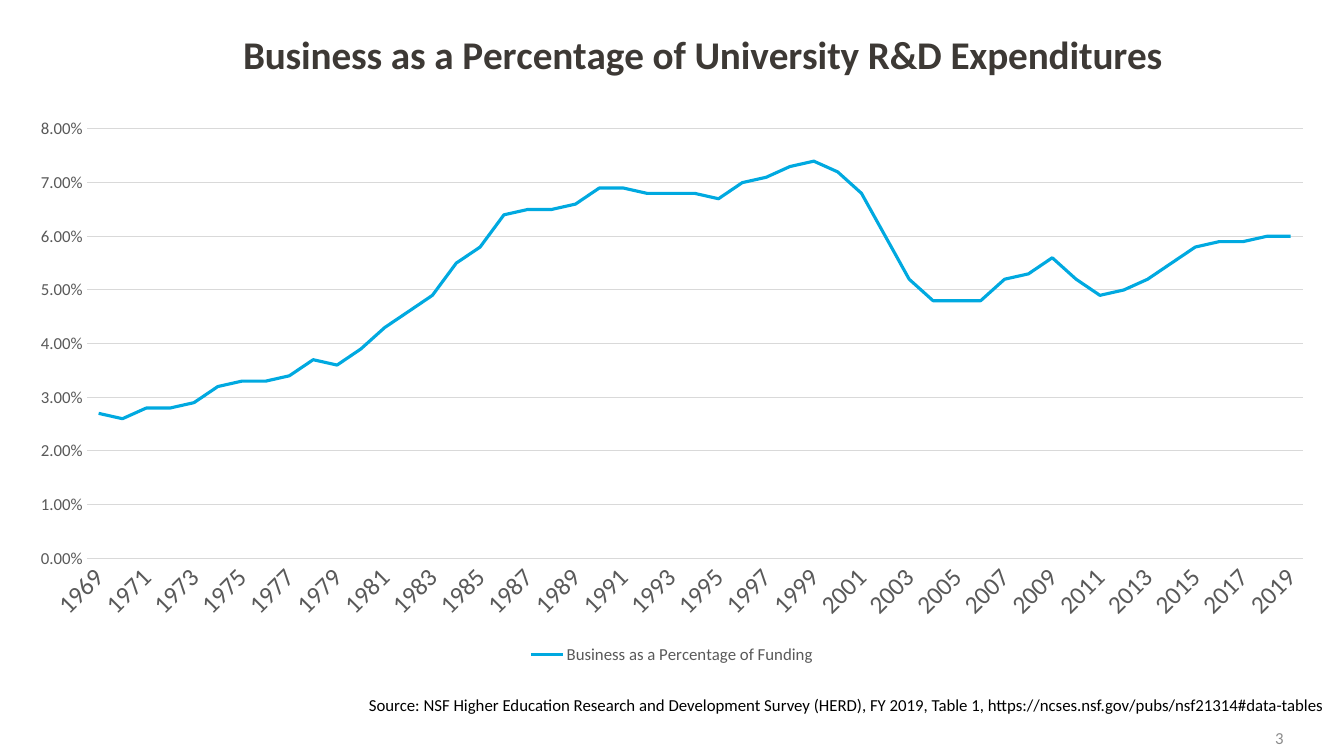
from dataclasses import dataclass

from lxml import etree
from pptx import Presentation
from pptx import util as u
from pptx.chart.data import CategoryChartData
from pptx.dml.color import RGBColor
from pptx.enum import chart as charts, text
from pptx.oxml import ns


@dataclass(frozen=True)
class Theme:
    font: str = "Calibri"
    title_color: str = "3D3935"
    label_color: str = "595959"
    number_color: str = "8C8C8C"
    source_color: str = "000000"
    grid_color: str = "D9D9D9"
    series_color: str = "00A9E0"
    title_size: float = 28
    year_size: float = 18
    body_size: float = 12
    series_width: float = 2.25
    grid_width: float = 0.75


FIRST_YEAR = 1969
SHARES = [
    0.027, 0.026, 0.028, 0.028, 0.029, 0.032, 0.033, 0.033, 0.034, 0.037,
    0.036, 0.039, 0.043, 0.046, 0.049, 0.055, 0.058, 0.064, 0.065, 0.065,
    0.066, 0.069, 0.069, 0.068, 0.068, 0.068, 0.067, 0.07, 0.071, 0.073,
    0.074, 0.072, 0.068, 0.06, 0.052, 0.048, 0.048, 0.048, 0.052, 0.053,
    0.056, 0.052, 0.049, 0.05, 0.052, 0.055, 0.058, 0.059, 0.059, 0.06,
    0.06,
]


class SlideBuilder:
    def __init__(self, slide, theme):
        self.slide = slide
        self.theme = theme

    def style_font(self, font, size, color, bold=False):
        font.name = self.theme.font
        font.size = u.Pt(size)
        font.bold = bold
        font.color.rgb = RGBColor.from_string(color)

    def style_line(self, line, width, color):
        line.width = u.Pt(width)
        line.color.rgb = RGBColor.from_string(color)

    def add_text(self, box, content, color, alignment, anchor):
        shape = self.slide.shapes.add_textbox(*map(u.Inches, box))
        frame = shape.text_frame
        frame.word_wrap = True
        frame.vertical_anchor = anchor
        paragraph = frame.paragraphs[0]
        paragraph.alignment = alignment
        run = paragraph.add_run()
        run.text = content
        self.style_font(run.font, self.theme.body_size, color)

    def place(self, element, settings):
        for old_layout in element.findall(ns.qn("c:layout")):
            element.remove(old_layout)
        layout = etree.Element(ns.qn("c:layout"))
        manual = etree.SubElement(layout, ns.qn("c:manualLayout"))
        for tag, value in settings.items():
            etree.SubElement(manual, ns.qn(f"c:{tag}")).set("val", str(value))
        position = 1 if element.find(ns.qn("c:tx")) is not None else 0
        element.insert(position, layout)

    def add_line_chart(self, box, title, title_at, plot_box, name, categories, values):
        left, top, width, height = box
        data = CategoryChartData(number_format="0.00%")
        data.categories = categories
        data.add_series(name, values)
        frame = self.slide.shapes.add_chart(
            charts.XL_CHART_TYPE.LINE, *map(u.Inches, box), data)
        chart = frame.chart
        self.style_font(chart.font, self.theme.body_size, self.theme.label_color)

        chart.has_title = True
        run = chart.chart_title.text_frame.paragraphs[0].add_run()
        run.text = title
        self.style_font(run.font, self.theme.title_size, self.theme.title_color, True)
        chart.chart_title.include_in_layout = False
        self.place(chart.chart_title._element, {
            "xMode": "edge", "yMode": "edge",
            "x": (title_at[0] - left) / width,
            "y": (title_at[1] - top) / height})

        plot = chart.plots[0]
        plot.vary_by_categories = False
        self.place(chart._chartSpace.chart.plotArea, {
            "layoutTarget": "inner", "xMode": "edge", "yMode": "edge",
            "x": (plot_box[0] - left) / width,
            "y": (plot_box[1] - top) / height,
            "w": plot_box[2] / width,
            "h": plot_box[3] / height})
        series = plot.series[0]
        series.smooth = False
        series.marker.style = charts.XL_MARKER_STYLE.NONE
        self.style_line(series.format.line, self.theme.series_width, self.theme.series_color)

        self.style_axes(chart)
        chart.has_legend = True
        chart.legend.position = charts.XL_LEGEND_POSITION.BOTTOM
        chart.legend.include_in_layout = False
        self.style_font(chart.legend.font, self.theme.body_size, self.theme.label_color)

    def style_axes(self, chart):
        theme = self.theme
        years, shares = chart.category_axis, chart.value_axis
        for axis, size in ((years, theme.year_size), (shares, theme.body_size)):
            axis.major_tick_mark = charts.XL_TICK_MARK.NONE
            axis.minor_tick_mark = charts.XL_TICK_MARK.NONE
            self.style_font(axis.tick_labels.font, size, theme.label_color)
        self.style_line(years.format.line, theme.grid_width, theme.grid_color)
        years._element.find(ns.qn("c:txPr")).find(ns.qn("a:bodyPr")).set("rot", "-2700000")
        skip = etree.Element(ns.qn("c:tickLblSkip"))
        skip.set("val", "2")
        years._element.find(ns.qn("c:noMultiLvlLbl")).addprevious(skip)

        shares.minimum_scale, shares.maximum_scale, shares.major_unit = 0, 0.08, 0.01
        shares.tick_labels.number_format = "0.00%"
        shares.tick_labels.number_format_is_linked = False
        shares.format.line.fill.background()
        shares.has_major_gridlines = True
        self.style_line(shares.major_gridlines.format.line, theme.grid_width, theme.grid_color)


def main():
    presentation = Presentation()
    presentation.slide_width = u.Inches(13.33)
    presentation.slide_height = u.Inches(7.5)
    theme = Theme()
    builder = SlideBuilder(
        presentation.slides.add_slide(presentation.slide_layouts[6]), theme)

    builder.add_text((9.72, 7.12, 3.11, 0.4), "3", theme.number_color,
                     text.PP_ALIGN.RIGHT, text.MSO_ANCHOR.MIDDLE)
    builder.add_line_chart(
        box=(0.14, 0.17, 13.05, 6.46),
        title="Business as a Percentage of University R&D Expenditures",
        title_at=(2.34, 0.21),
        plot_box=(0.86, 1.28, 12.06, 4.26),
        name="Business as a Percentage of Funding",
        categories=[str(FIRST_YEAR + index) for index in range(len(SHARES))],
        values=SHARES)
    builder.add_text(
        (3.56, 6.84, 9.89, 0.3),
        "Source: NSF Higher Education Research and Development Survey (HERD), "
        "FY 2019, Table 1, https://ncses.nsf.gov/pubs/nsf21314#data-tables",
        theme.source_color, text.PP_ALIGN.LEFT, text.MSO_ANCHOR.TOP)

    presentation.save("out.pptx")


if __name__ == "__main__":
    main()
